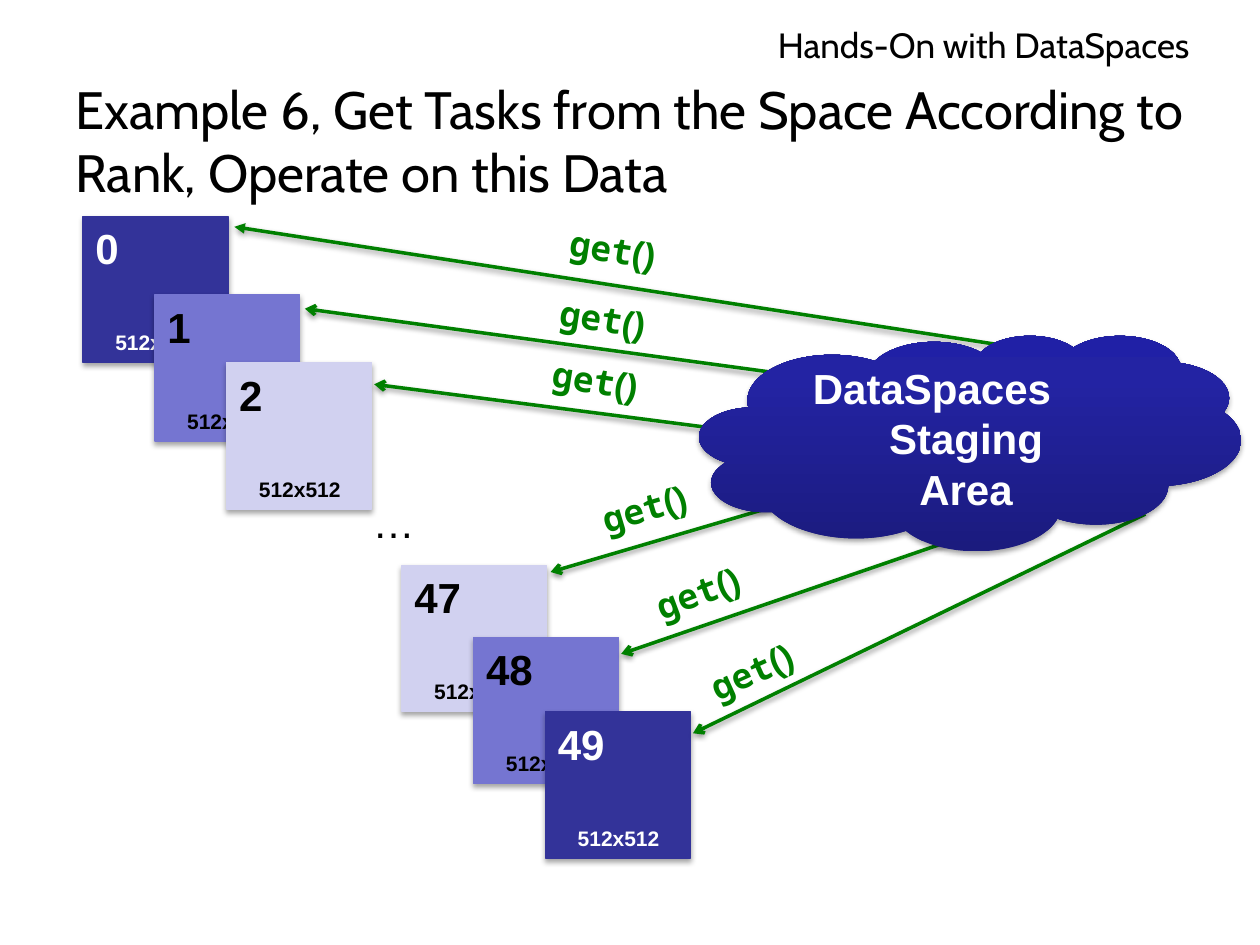
"""Build the slide on getting tasks from the DataSpaces staging area by rank."""
from copy import deepcopy
from dataclasses import dataclass

from lxml import etree
from pptx import Presentation, util as u
from pptx.dml.color import RGBColor
from pptx.enum import shapes, text
from pptx.oxml import parse_xml
from pptx.oxml.ns import nsdecls, qn

BLACK, WHITE, GREEN = "000000", "FFFFFF", "008000"
DARK, MEDIUM, LIGHT = "333399", "7575D1", "D1D1F0"
TILE_WIDTH, TILE_HEIGHT = 1.15, 1.16
LEFT, CENTER, RIGHT = text.PP_ALIGN.LEFT, text.PP_ALIGN.CENTER, text.PP_ALIGN.RIGHT


@dataclass
class Tile:
    rank: int
    left: float
    top: float
    fill: str
    ink: str


@dataclass
class GetCall:
    start: tuple[float, float]
    end: tuple[float, float]
    label: tuple[float, float]
    rotation: float
    arrowhead: str = "arrow"


TILES = [
    Tile(0, 0.66, 1.72, DARK, WHITE),
    Tile(1, 1.23, 2.34, MEDIUM, BLACK),
    Tile(2, 1.80, 2.88, LIGHT, BLACK),
    Tile(47, 3.19, 4.49, LIGHT, BLACK),
    Tile(48, 3.76, 5.06, MEDIUM, BLACK),
    Tile(49, 4.33, 5.65, DARK, WHITE),
]
GET_CALLS = [
    GetCall((7.89, 2.73), (1.86, 1.8), (4.42, 1.8), 9, "triangle"),
    GetCall((6.24, 2.97), (2.42, 2.45), (4.34, 2.35), 9),
    GetCall((5.91, 3.43), (2.97, 3.05), (4.28, 2.84), 9),
    GetCall((6.21, 4), (4.37, 4.54), (4.66, 3.74), 343.3),
    GetCall((7.58, 4.28), (4.93, 5.19), (5.08, 4.39), 339.6),
    GetCall((9.09, 4.08), (5.5, 5.82), (5.5, 5), 335.7),
]


def color(value: str) -> RGBColor:
    return RGBColor.from_string(value)


def format_run(run, size: float, ink: str, font: str = "Arial", bold: bool = False) -> None:
    run.font.size, run.font.name, run.font.bold = u.Pt(size), font, bold
    run.font.color.rgb = color(ink)


def add_shadow(shape, opacity: int, distance: float) -> None:
    properties = shape._element.spPr
    for effects in properties.findall(qn("a:effectLst")):
        properties.remove(effects)
    properties.append(parse_xml(
        f'<a:effectLst {nsdecls("a")}><a:outerShdw blurRad="{u.Pt(3.1)}" '
        f'dist="{u.Pt(distance)}" dir="5400000" rotWithShape="0"><a:srgbClr val="000000">'
        f'<a:alpha val="{opacity * 1000}"/></a:srgbClr></a:outerShdw></a:effectLst>'))


def add_text(slide, content: str, left: float, top: float, width: float, height: float,
             size: float, ink: str = BLACK, font: str = "Arial", bold: bool = False,
             align=LEFT, wrap: bool = True):
    box = slide.shapes.add_textbox(*map(u.Inches, (left, top, width, height)))
    box.text_frame.word_wrap = wrap
    box.text_frame.text = content
    paragraph = box.text_frame.paragraphs[0]
    paragraph.alignment = align
    format_run(paragraph.runs[0], size, ink, font, bold)
    return box


def add_title(slide, content: str) -> None:
    title = slide.shapes.title
    title.left, title.top, title.width, title.height = map(u.Inches, (0.5, 0.67, 9, 0.88))
    frame = title.text_frame
    frame.text = content
    frame.auto_size = text.MSO_AUTO_SIZE.NONE
    frame.vertical_anchor = text.MSO_ANCHOR.MIDDLE
    frame.paragraphs[0].alignment = LEFT
    format_run(frame.paragraphs[0].runs[0], 30, BLACK, "Cabin")


def add_tile(slide, tile: Tile) -> None:
    square = slide.shapes.add_shape(
        shapes.MSO_SHAPE.RECTANGLE,
        *map(u.Inches, (tile.left, tile.top, TILE_WIDTH, TILE_HEIGHT)))
    square.fill.solid()
    square.fill.fore_color.rgb = square.line.color.rgb = color(tile.fill)
    square.line.width = u.Pt(0.75)
    add_shadow(square, 35, 1.8)
    add_text(slide, "512x512", tile.left, tile.top + 0.85, 1.16, 0.3, 12, tile.ink,
             bold=True, align=CENTER)
    add_text(slide, str(tile.rank), tile.left, tile.top, 0.86, 0.5, 24, tile.ink, bold=True)


def add_get_call(slide, call: GetCall) -> None:
    arrow = slide.shapes.add_connector(
        shapes.MSO_CONNECTOR.STRAIGHT, *map(u.Inches, call.start + call.end))
    arrow.line.color.rgb = color(GREEN)
    arrow.line.width = u.Pt(2)
    line = arrow._element.spPr.find(qn("a:ln"))
    etree.SubElement(line, qn("a:tailEnd"), type=call.arrowhead)
    add_shadow(arrow, 38, 1.6)
    label = add_text(slide, "get", *call.label, 1.41, 0.44, 20, GREEN, "Noto Sans Mono", True)
    parentheses = label.text_frame.paragraphs[0].add_run()
    parentheses.text = "()"
    format_run(parentheses, 20, GREEN, bold=True)
    label.rotation = call.rotation


def add_cloud(slide) -> None:
    cloud = slide.shapes.add_shape(
        shapes.MSO_SHAPE.CLOUD, *map(u.Inches, (5.55, 2.66, 4.3, 1.71)))
    cloud.fill.gradient()
    cloud.fill.gradient_angle = 90
    last_stop = cloud._element.xpath(".//a:gs")[-1]
    last_stop.addprevious(deepcopy(last_stop))
    gradient = [(0, "1B1B7E"), (0.8, "2323A3"), (1, "2020A6")]
    for stop, (position, value) in zip(cloud.fill.gradient_stops, gradient):
        stop.position, stop.color.rgb = position, color(value)
    cloud.line.fill.background()
    add_shadow(cloud, 35, 1.8)
    frame = cloud.text_frame
    frame.word_wrap = True
    frame.vertical_anchor = text.MSO_ANCHOR.MIDDLE
    frame.text = "DataSpaces\nStaging Area"
    for paragraph, (side, margin) in zip(frame.paragraphs, [("marR", 0.3), ("marL", 0.54)]):
        paragraph.alignment = CENTER
        paragraph._p.get_or_add_pPr().set(side, str(u.Inches(margin)))
        format_run(paragraph.runs[0], 24, WHITE, bold=True)


def main() -> None:
    presentation = Presentation()
    presentation.slide_width, presentation.slide_height = u.Inches(10), u.Inches(7.5)
    slide = presentation.slides.add_slide(presentation.slide_layouts[5])
    add_text(slide, "Hands-On with DataSpaces", 5.88, 0.14, 3.66, 0.44, 20,
             font="Cabin", align=RIGHT, wrap=False)
    add_title(slide, "Example 6, Get Tasks from the Space According to Rank, "
                     "Operate on this Data")
    for tile in TILES:
        add_tile(slide, tile)
    add_text(slide, "…", 2.86, 3.89, 1.18, 0.5, 24)
    for call in GET_CALLS:
        add_get_call(slide, call)
    add_cloud(slide)
    presentation.save("out.pptx")


if __name__ == "__main__":
    main()
